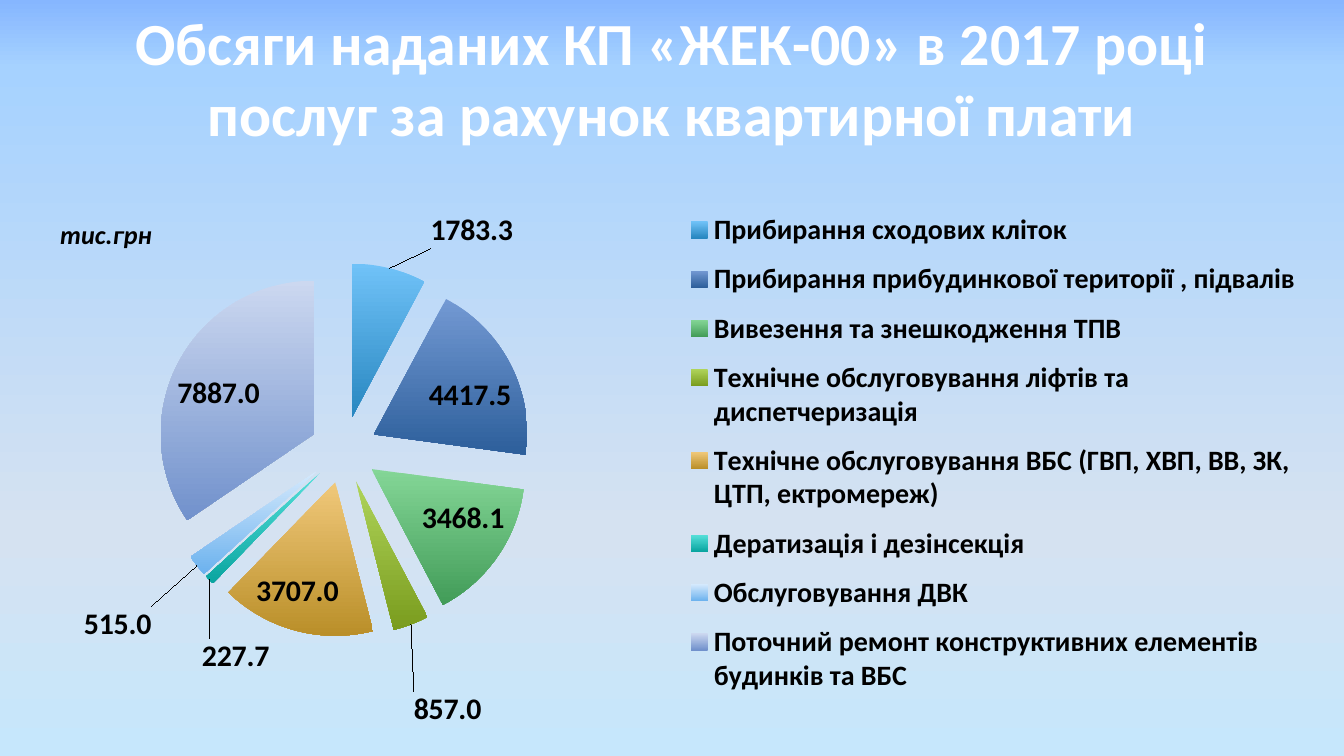
import copy

import pptx
import pptx.chart.data
import pptx.dml.color
import pptx.enum.chart
import pptx.enum.text
import pptx.oxml
import pptx.oxml.ns
import pptx.util

RGB = pptx.dml.color.RGBColor.from_string
WHITE = RGB("FFFFFF")
BLACK = RGB("000000")
SKY = [(0, RGB("86B6FF")), (0.09, RGB("A6D2FF")),
       (0.7, RGB("D5E2F1")), (1, RGB("C6E7FC"))]

HEADING = "Обсяги наданих КП «ЖЕК-00» в 2017 році\vпослуг за рахунок квартирної плати"
UNIT = "тис.грн"
SERVICES = [
    ("Прибирання сходових кліток", 1783.3, RGB("70C2F8"), RGB("2887C0")),
    ("Прибирання прибудинкової території , підвалів", 4417.5, RGB("7399D3"), RGB("2D5F9B")),
    ("Вивезення та знешкодження ТПВ", 3468.1, RGB("84D697"), RGB("429C58")),
    ("Технічне обслуговування ліфтів та диспетчеризація", 857, RGB("AFD45A"), RGB("7A9C1E")),
    ("Технічне обслуговування ВБС (ГВП, ХВП, ВВ, ЗК, ЦТП, ектромереж)", 3707,
     RGB("F0C87A"), RGB("BA8F29")),
    ("Дератизація і дезінсекція", 227.7, RGB("55E0DA"), RGB("0AA5A0")),
    ("Обслуговування ДВК", 515, RGB("D6EAFD"), RGB("6CB2EE")),
    ("Поточний ремонт конструктивних елементів будинків та ВБС", 7887,
     RGB("CCD8F0"), RGB("7191CC")),
]
LABEL_SHIFTS = {0: (0.03, -0.02), 3: (0, 0.1), 5: (0.05, 0.09), 6: (-0.03, 0.06)}
EXPLOSION = 22

HEADING_BOX = (0, 8, 1344, 138)
CHART_BOX = (16, 144, 1312, 594)
UNIT_BOX = (47, 212, 120, 46)
PIE_AREA = (0.02, 0.2, 0.46, 0.63)
LEGEND_AREA = (0.5, 0.09, 0.49, 0.86)

HEADING_FONT = {"name": "Calibri", "size": pptx.util.Pt(32), "bold": True}
LABEL_FONT = {"name": "Calibri", "size": pptx.util.Pt(16), "bold": True}
LEGEND_FONT = {**LABEL_FONT, "size": pptx.util.Pt(15)}
UNIT_FONT = {**LABEL_FONT, "size": pptx.util.Pt(14), "italic": True}


def px(*lengths):
    return [pptx.util.Emu(round(length * 914400 / 134.4)) for length in lengths]


def style(font, formats, color):
    for key, value in formats.items():
        setattr(font, key, value)
    font.color.rgb = color


def fill_down(fill, stops):
    fill.gradient()
    fill.gradient_angle = 270
    stop_list = fill.gradient_stops[0]._gs.getparent()
    while len(stop_list) < len(stops):
        stop_list.append(copy.deepcopy(stop_list[-1]))
    for stop, (position, color) in zip(fill.gradient_stops, stops):
        stop.position = position
        stop.color.rgb = color


def chart_xml(tag, content):
    return pptx.oxml.parse_xml(
        f"<c:{tag} {pptx.oxml.ns.nsdecls('c')}>{content}</c:{tag}>")


def area_layout(area):
    x, y, w, h = area
    return chart_xml("layout", '<c:manualLayout><c:layoutTarget val="inner"/>'
                     '<c:xMode val="edge"/><c:yMode val="edge"/>'
                     f'<c:x val="{x}"/><c:y val="{y}"/><c:w val="{w}"/><c:h val="{h}"/>'
                     '</c:manualLayout>')


def place_area(element, area):
    for old in element.findall(pptx.oxml.ns.qn("c:layout")):
        element.remove(old)
    layout = area_layout(area)
    if element.tag == pptx.oxml.ns.qn("c:legend"):
        target = layout[0].find(pptx.oxml.ns.qn("c:layoutTarget"))
        layout[0].remove(target)
        element.find(pptx.oxml.ns.qn("c:legendPos")).addnext(layout)
    else:
        element.insert(0, layout)


def add_heading(slide):
    heading = slide.shapes.title
    heading.left, heading.top, heading.width, heading.height = px(*HEADING_BOX)
    frame = heading.text_frame
    frame.text = HEADING
    frame.auto_size = pptx.enum.text.MSO_AUTO_SIZE.NONE
    frame.vertical_anchor = pptx.enum.text.MSO_ANCHOR.MIDDLE
    paragraph = frame.paragraphs[0]
    paragraph.alignment = pptx.enum.text.PP_ALIGN.CENTER
    for run in paragraph.runs:
        style(run.font, HEADING_FONT, WHITE)


def add_pie(slide):
    volumes = pptx.chart.data.CategoryChartData(number_format="0.0")
    volumes.categories = [service[0] for service in SERVICES]
    volumes.add_series("Series 1", [service[1] for service in SERVICES])
    chart = slide.shapes.add_chart(
        pptx.enum.chart.XL_CHART_TYPE.PIE, *px(*CHART_BOX), volumes).chart
    chart.has_title = False
    style(chart.font, LABEL_FONT, BLACK)
    chart.plots[0].vary_by_categories = True
    chart.has_legend = True
    legend = chart.legend
    legend.position = pptx.enum.chart.XL_LEGEND_POSITION.RIGHT
    legend.include_in_layout = False
    style(legend.font, LEGEND_FONT, BLACK)
    place_area(legend._element, LEGEND_AREA)
    place_area(chart.plots[0]._element.getparent(), PIE_AREA)

    best_fit = pptx.enum.chart.XL_LABEL_POSITION.BEST_FIT
    series = chart.plots[0].series[0]
    labels = series.data_labels
    labels.show_value = True
    labels.number_format = "0.0"
    labels.number_format_is_linked = False
    labels.position = best_fit
    style(labels.font, LABEL_FONT, BLACK)

    for index, (_, _, top_color, bottom_color) in enumerate(SERVICES):
        point = series.points[index]
        fill_down(point.format.fill, [(0, top_color), (1, bottom_color)])
        point.format.line.fill.background()
        if index in LABEL_SHIFTS:
            label = point.data_label
            style(label.font, LABEL_FONT, BLACK)
            label.position = best_fit
            x, y = LABEL_SHIFTS[index]
            shift = chart_xml("layout", f'<c:manualLayout><c:x val="{x}"/>'
                              f'<c:y val="{y}"/></c:manualLayout>')
            label_xml = labels._element.xpath(f"c:dLbl[c:idx/@val={index}]")[0]
            label_xml[0].addnext(shift)

    explosion = chart_xml("explosion", "")
    explosion.set("val", str(EXPLOSION))
    series._element.find(pptx.oxml.ns.qn("c:dPt")).addprevious(explosion)


def add_unit(slide):
    frame = slide.shapes.add_textbox(*px(*UNIT_BOX)).text_frame
    frame.word_wrap = False
    frame.auto_size = pptx.enum.text.MSO_AUTO_SIZE.SHAPE_TO_FIT_TEXT
    frame.text = UNIT
    style(frame.paragraphs[0].runs[0].font, UNIT_FONT, BLACK)


def main():
    deck = pptx.Presentation()
    deck.slide_width, deck.slide_height = px(1344, 756)
    slide = deck.slides.add_slide(deck.slide_layouts[5])
    fill_down(slide.background.fill, SKY)
    add_heading(slide)
    add_pie(slide)
    add_unit(slide)
    deck.save("out.pptx")


if __name__ == "__main__":
    main()
